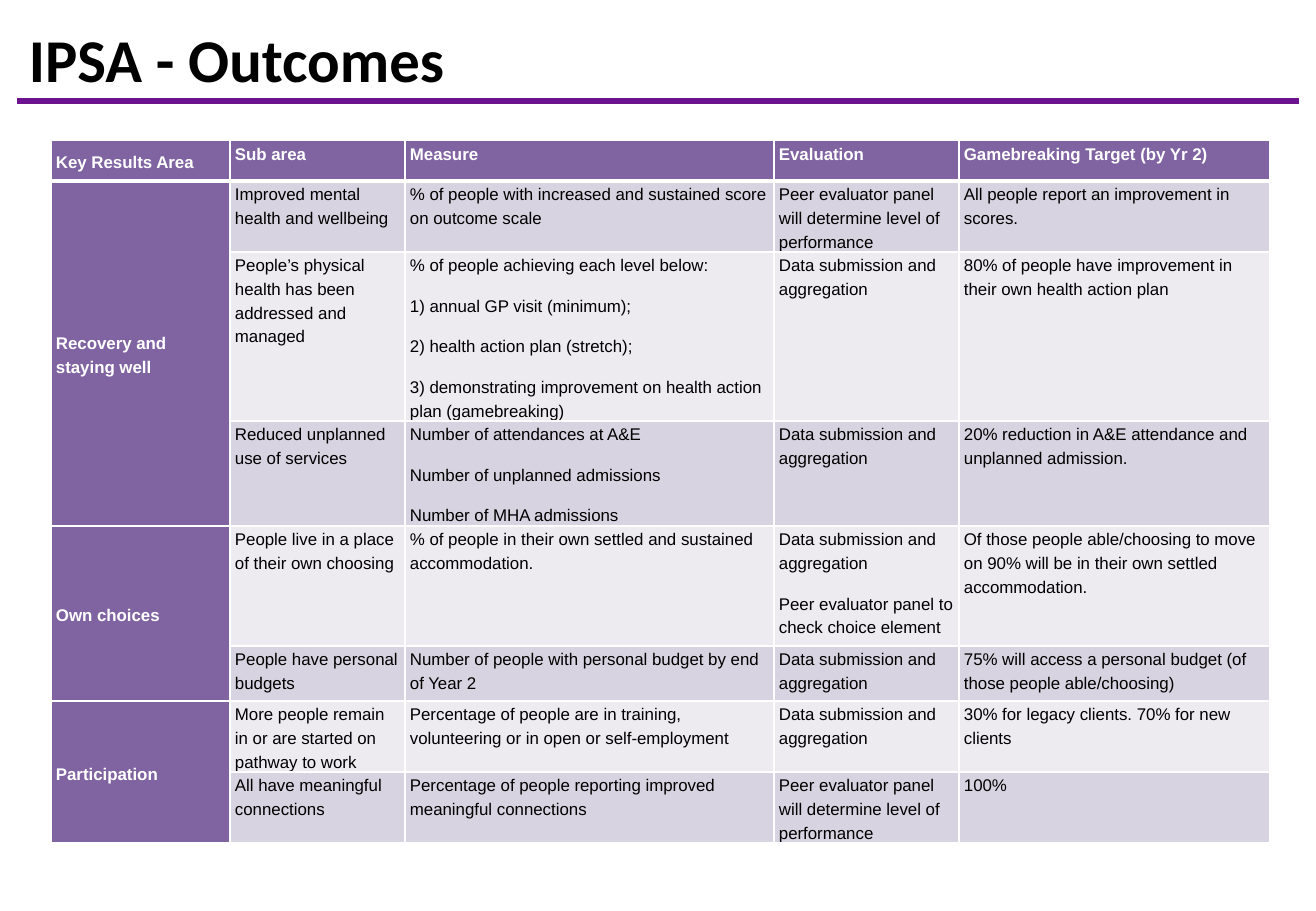
import pptx
import pptx.util
import pptx.dml.color
import pptx.enum.shapes
import pptx.enum.text
import pptx.oxml.ns
from lxml import etree

EMU_PER_PX = 914400 / 121.5
BLACK = pptx.dml.color.RGBColor(0x00, 0x00, 0x00)
WHITE = pptx.dml.color.RGBColor(0xFF, 0xFF, 0xFF)
PURPLE = pptx.dml.color.RGBColor(0x80, 0x64, 0xA2)
RULE_PURPLE = pptx.dml.color.RGBColor(0x6C, 0x13, 0x8F)
DARK_BAND = pptx.dml.color.RGBColor(0xD8, 0xD3, 0xE0)
LIGHT_BAND = pptx.dml.color.RGBColor(0xED, 0xEA, 0xF0)

COLUMN_WIDTHS = [179, 175, 369, 185, 311]
ROW_HEIGHTS = [41, 70, 169, 105, 120, 55, 71, 70]
HEADINGS = ["Key Results Area", "Sub area", "Measure", "Evaluation",
            "Gamebreaking Target (by Yr 2)"]
DATA = "Data submission and aggregation"
PANEL = "Peer evaluator panel will determine level of performance"
# Each area holds rows of sub area, measure, evaluation and target;
# a line break inside a text starts a new paragraph.
AREAS = [
    ("Recovery and staying well", [
        ["Improved mental health and wellbeing",
         "% of people with increased and sustained score on outcome scale",
         PANEL,
         "All people report an improvement in scores."],
        ["People’s physical health has been addressed and managed",
         "% of people achieving each level below:\n"
         "1) annual GP visit (minimum);\n"
         "2) health action plan (stretch);\n"
         "3) demonstrating improvement on health action plan (gamebreaking)",
         DATA,
         "80% of people have improvement in their own health action plan"],
        ["Reduced unplanned use of services",
         "Number of attendances at A&E\n"
         "Number of unplanned admissions\n"
         "Number of MHA admissions",
         DATA,
         "20% reduction in A&E attendance and unplanned admission."],
    ]),
    ("Own choices", [
        ["People live in a place of their own choosing",
         "% of people in their own settled and sustained accommodation.",
         DATA + "\nPeer evaluator panel to check choice element",
         "Of those people able/choosing to move on 90% will be in their own "
         "settled accommodation."],
        ["People have personal budgets",
         "Number of people with personal budget by end of Year 2",
         DATA,
         "75% will access a personal budget (of those people able/choosing)"],
    ]),
    ("Participation", [
        ["More people remain in or are started on pathway to work",
         "Percentage of people are in training, volunteering or in open or "
         "self-employment",
         DATA,
         "30% for legacy clients. 70% for new clients"],
        ["All have meaningful connections",
         "Percentage of people reporting improved meaningful connections",
         PANEL,
         "100%"],
    ]),
]


def px(length):
    return pptx.util.Emu(round(length * EMU_PER_PX))


def add_run(paragraph, text, font_name, size, color, bold):
    run = paragraph.add_run()
    run.text = text
    run.font.name = font_name
    run.font.size = pptx.util.Pt(size)
    run.font.color.rgb = color
    run.font.bold = bold


def set_borders(cell, top=1, bottom=1):
    """Draw white cell borders, with widths in points."""
    properties = cell._tc.get_or_add_tcPr()
    sides = [("lnL", 1), ("lnR", 1), ("lnT", top), ("lnB", bottom)]
    for index, (side, width) in enumerate(sides):
        line = etree.Element(pptx.oxml.ns.qn("a:" + side),
                             w=str(pptx.util.Pt(width)))
        fill = etree.SubElement(line, pptx.oxml.ns.qn("a:solidFill"))
        etree.SubElement(fill, pptx.oxml.ns.qn("a:srgbClr"), val=str(WHITE))
        properties.insert(index, line)


def fill_cell(cell, text, fill, color, bold, middle):
    cell.fill.solid()
    cell.fill.fore_color.rgb = fill
    cell.margin_left = cell.margin_right = px(5)
    cell.margin_top = cell.margin_bottom = 0
    anchor = pptx.enum.text.MSO_ANCHOR
    cell.vertical_anchor = anchor.MIDDLE if middle else anchor.TOP
    for index, line in enumerate(text.split("\n")):
        frame = cell.text_frame
        paragraph = frame.add_paragraph() if index else frame.paragraphs[0]
        paragraph.line_spacing = pptx.util.Pt(14)
        paragraph.space_after = pptx.util.Pt(10)
        add_run(paragraph, line, "Arial", 10, color, bold)


def add_outcomes_table(slide):
    frame = slide.shapes.add_table(
        len(ROW_HEIGHTS), len(COLUMN_WIDTHS), px(51), px(140),
        px(sum(COLUMN_WIDTHS)), px(sum(ROW_HEIGHTS)))
    table = frame.table
    table.first_row = table.horz_banding = False
    for column, width in zip(table.columns, COLUMN_WIDTHS):
        column.width = px(width)
    for row, height in zip(table.rows, ROW_HEIGHTS):
        row.height = px(height)

    for column, heading in enumerate(HEADINGS):
        fill_cell(table.cell(0, column), heading, PURPLE, WHITE, True,
                  column == 0)
    row = 1
    for area, area_rows in AREAS:
        area_cell = table.cell(row, 0)
        area_cell.merge(table.cell(row + len(area_rows) - 1, 0))
        fill_cell(area_cell, area, PURPLE, WHITE, True, True)
        for texts in area_rows:
            band = DARK_BAND if row % 2 else LIGHT_BAND
            for column, text in enumerate(texts, start=1):
                fill_cell(table.cell(row, column), text, band, BLACK, False,
                          False)
            row += 1

    for row in range(len(ROW_HEIGHTS)):
        for column in range(len(COLUMN_WIDTHS)):
            set_borders(table.cell(row, column),
                        top=3 if row == 1 else 1,
                        bottom=3 if row == 0 else 1)


def add_title(slide, text):
    box = slide.shapes.add_textbox(px(17), px(16), px(1081), px(86))
    box.text_frame.word_wrap = True
    box.text_frame.auto_size = pptx.enum.text.MSO_AUTO_SIZE.SHAPE_TO_FIT_TEXT
    add_run(box.text_frame.paragraphs[0], text, "Calibri", 36, BLACK, True)


def add_rule(slide, left, right, y):
    rule = slide.shapes.add_connector(
        pptx.enum.shapes.MSO_CONNECTOR.STRAIGHT,
        px(left), px(y), px(right), px(y))
    rule.line.color.rgb = RULE_PURPLE
    rule.line.width = pptx.util.Pt(3)
    etree.SubElement(rule._element.spPr, pptx.oxml.ns.qn("a:effectLst"))


def main():
    presentation = pptx.Presentation()
    presentation.slide_width = px(1316)
    presentation.slide_height = px(911)
    slide = presentation.slides.add_slide(presentation.slide_layouts[6])
    add_outcomes_table(slide)
    add_title(slide, "IPSA - Outcomes")
    add_rule(slide, 17, 1299, 101)
    presentation.save("out.pptx")


if __name__ == "__main__":
    main()
